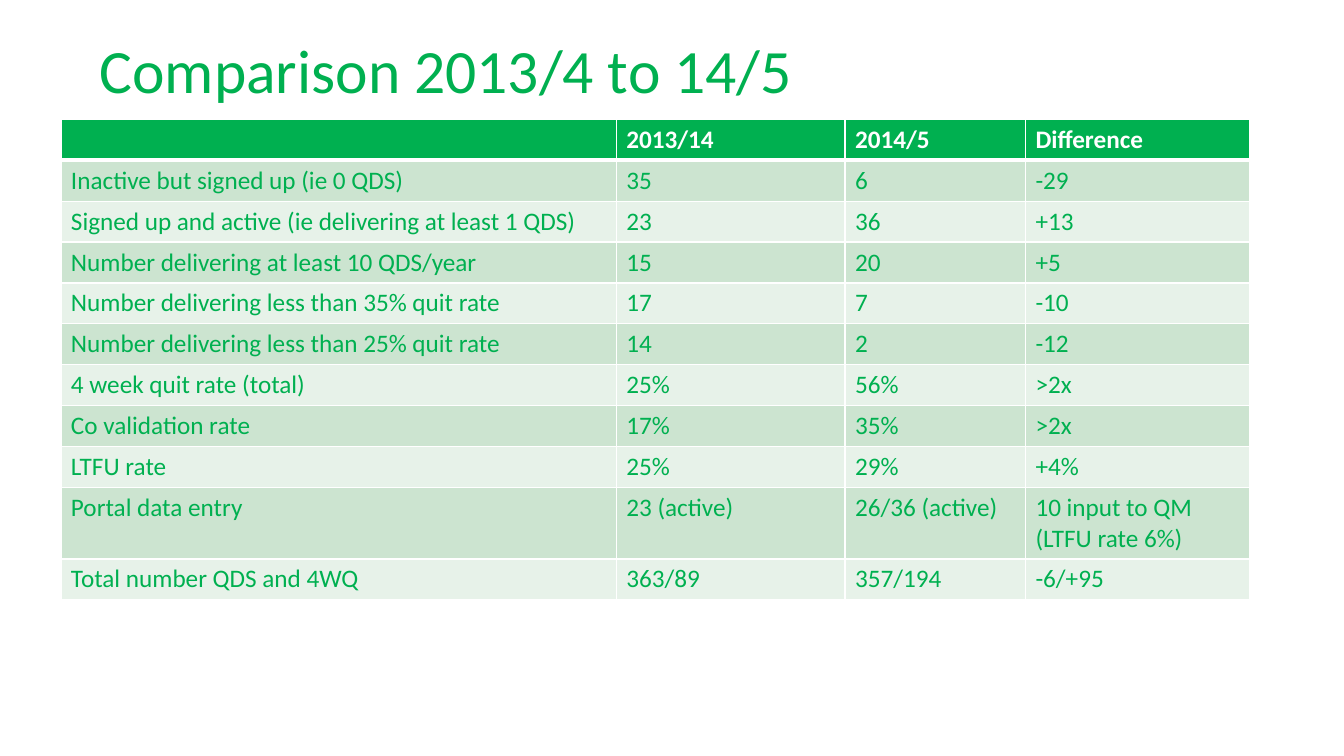
from lxml.etree import SubElement
from pptx import Presentation
from pptx.dml.color import RGBColor
from pptx.enum.text import MSO_ANCHOR, MSO_AUTO_SIZE, PP_ALIGN
from pptx.oxml.ns import qn
from pptx.util import Pt

GREEN, WHITE = "00B050", "FFFFFF"
BANDS = ["E7F2E9", "CCE4D0"]
COLUMN_WIDTHS = [396.7, 163.4, 128.9, 159.8]
ROW_HEIGHT, TALL_ROW_HEIGHT = 29.2, 50.8
ROWS = [
    ["", "2013/14", "2014/5", "Difference"],
    ["Inactive but signed up (ie 0 QDS)", "35", "6", "-29"],
    ["Signed up and active (ie delivering at least 1 QDS)", "23", "36", "+13"],
    ["Number delivering at least 10 QDS/year", "15", "20", "+5"],
    ["Number delivering less than 35% quit rate", "17", "7", "-10"],
    ["Number delivering less than 25% quit rate", "14", "2", "-12"],
    ["4 week quit rate (total)", "25%", "56%", ">2x"],
    ["Co validation rate", "17%", "35%", ">2x"],
    ["LTFU rate", "25%", "29%", "+4%"],
    ["Portal data entry", "23 (active)", "26/36 (active)", "10 input to QM (LTFU rate 6%)"],
    ["Total number QDS and 4WQ", "363/89", "357/194", "-6/+95"],
]
TALL_ROW = 9


def add_span(para, text, size, color, bold=False):
    span = para.add_run()
    span.text = text
    span.font.name = "Calibri"
    span.font.size = Pt(size)
    span.font.bold = bold
    span.font.color.rgb = RGBColor.from_string(color)


def add_border(cell, side, width):
    line = SubElement(cell._tc.get_or_add_tcPr(), qn(f"a:ln{side}"), w=str(Pt(width)))
    fill = SubElement(line, qn("a:solidFill"))
    SubElement(fill, qn("a:srgbClr"), val=WHITE)


deck = Presentation()
deck.slide_width, deck.slide_height = Pt(960), Pt(540)
page = deck.slides.add_slide(deck.slide_layouts[5])

title = page.shapes.title
title.left, title.top, title.width, title.height = Pt(64), Pt(0), Pt(828), Pt(104.4)
title.text_frame.auto_size = MSO_AUTO_SIZE.NONE
title.text_frame.vertical_anchor = MSO_ANCHOR.MIDDLE
para = title.text_frame.paragraphs[0]
para.alignment = PP_ALIGN.LEFT
para.line_spacing = 0.9
add_span(para, "Comparison 2013/4 to 14/5", 44, GREEN)

heights = [TALL_ROW_HEIGHT if index == TALL_ROW else ROW_HEIGHT for index in range(len(ROWS))]
frame = page.shapes.add_table(
    len(ROWS), len(COLUMN_WIDTHS), Pt(43.5), Pt(85.3), Pt(sum(COLUMN_WIDTHS)), Pt(sum(heights))
)
table = frame.table
for column, width in zip(table.columns, COLUMN_WIDTHS):
    column.width = Pt(width)

for row_index, texts in enumerate(ROWS):
    header = row_index == 0
    table.rows[row_index].height = Pt(heights[row_index])
    for column_index, text in enumerate(texts):
        cell = table.cell(row_index, column_index)
        widths = {"L": 1, "R": 1, "T": 3 if row_index == 1 else 1, "B": 3 if header else 1}
        for side, width in widths.items():
            add_border(cell, side, width)
        cell.fill.solid()
        cell.fill.fore_color.rgb = RGBColor.from_string(GREEN if header else BANDS[row_index % 2])
        if text:
            add_span(cell.text_frame.paragraphs[0], text, 18, WHITE if header else GREEN, header)

deck.save("out.pptx")
